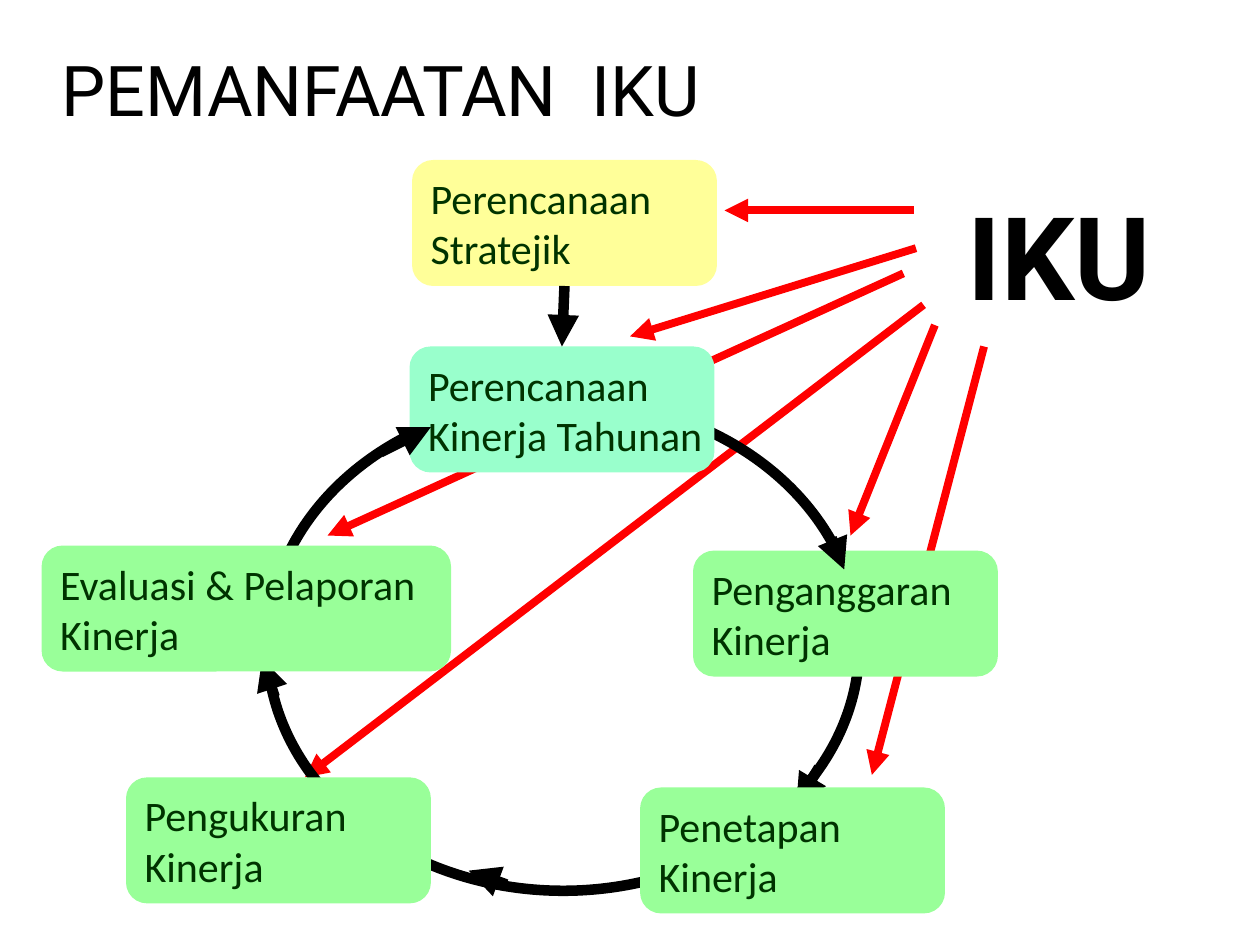
"""Build the slide on how IKU feeds each stage of the performance cycle."""
from lxml.etree import SubElement
from pptx import Presentation
from pptx.dml.color import RGBColor
from pptx.enum.shapes import MSO_CONNECTOR, MSO_SHAPE
from pptx.enum.text import MSO_ANCHOR, PP_ALIGN
from pptx.oxml.ns import qn
from pptx.util import Inches, Pt

COLORS = {
    "red": "FF0000", "black": "000000", "text": "003300",
    "yellow": "FFFF99", "mint": "99FFCC", "green": "99FF99",
}


def add_arrow(start, end, color, width):
    points = [Inches(value) for value in (*start, *end)]
    arrow = slide.shapes.add_connector(MSO_CONNECTOR.STRAIGHT, *points)
    arrow.line.color.rgb = RGBColor.from_string(COLORS[color])
    arrow.line.width = Pt(width)
    SubElement(arrow.line._get_or_add_ln(), qn("a:tailEnd"), type="triangle")
    SubElement(arrow._element.spPr, qn("a:effectLst"))
    return arrow


def add_stage(left, top, width, color, lines):
    stage = slide.shapes.add_shape(
        MSO_SHAPE.ROUNDED_RECTANGLE, Inches(left), Inches(top), Inches(width), Inches(1))
    stage.shadow.inherit = False
    stage.fill.solid()
    stage.fill.fore_color.rgb = RGBColor.from_string(COLORS[color])
    stage.line.fill.background()
    frame = stage.text_frame
    frame.word_wrap = False
    frame.vertical_anchor = MSO_ANCHOR.MIDDLE
    for index, line in enumerate(lines):
        paragraph = frame.add_paragraph() if index else frame.paragraphs[0]
        paragraph.text = line
        paragraph.alignment = PP_ALIGN.LEFT
        paragraph.font.name = "Calibri"
        paragraph.font.size = Pt(24)
        paragraph.font.color.rgb = RGBColor.from_string(COLORS["text"])
    return stage


presentation = Presentation()
presentation.slide_width = Inches(10)
presentation.slide_height = Inches(7.5)
slide = presentation.slides.add_slide(presentation.slide_layouts[6])

for start, end in [
    ((7.33, 2.42), (2.42, 6.17)),
    ((7.17, 2.17), (2.6, 4.25)),
    ((7.81, 2.75), (6.92, 6.15)),
    ((7.25, 1.67), (5.75, 1.67)),
]:
    add_arrow(start, end, "red", 4.5)

cycle = slide.shapes.add_shape(
    MSO_SHAPE.OVAL, Inches(2.12), Inches(3.17), Inches(4.7), Inches(3.9))
cycle.shadow.inherit = False
cycle.fill.background()
cycle.line.color.rgb = RGBColor.from_string(COLORS["black"])
cycle.line.width = Pt(6)

strategic_plan = add_stage(3.27, 1.27, 2.42, "yellow", ["Perencanaan", "Stratejik"])
annual_plan = add_stage(3.25, 2.75, 2.42, "mint", ["Perencanaan", "Kinerja Tahunan"])
add_stage(5.5, 4.37, 2.42, "green", ["Penganggaran", "Kinerja"])

plan_link = add_arrow((4.47, 2.27), (4.47, 2.77), "black", 6)
plan_link.begin_connect(strategic_plan, 2)
plan_link.end_connect(annual_plan, 0)

for start, end in [
    ((6.6, 4.27), (6.7, 4.52)),
    ((6.5, 6.09), (6.32, 6.39)),
    ((4.02, 7.02), (3.72, 6.91)),
    ((2.18, 5.53), (2.08, 5.23)),
    ((3.02, 3.59), (3.42, 3.39)),
]:
    add_arrow(start, end, "black", 6)

for words, box, size, bold, anchor, wrap in [
    ("PEMANFAATAN  IKU", (0.39, 0.24, 8.58, 0.92), 40, False, MSO_ANCHOR.MIDDLE, False),
    ("IKU", (7.58, 1.42, 2.22, 1.21), 66, True, MSO_ANCHOR.TOP, True),
]:
    frame = slide.shapes.add_textbox(*[Inches(value) for value in box]).text_frame
    frame.word_wrap = wrap
    frame.vertical_anchor = anchor
    heading = frame.paragraphs[0]
    heading.text = words
    heading.alignment = PP_ALIGN.LEFT
    heading.font.name = "Roboto"
    heading.font.size = Pt(size)
    heading.font.bold = bold
    heading.font.color.rgb = RGBColor.from_string(COLORS["black"])

for start, end in [((7.27, 1.97), (5, 2.67)), ((7.42, 2.58), (6.75, 4.25))]:
    add_arrow(start, end, "red", 4.5)

for left, top, width, subject in [
    (5.08, 6.25, 2.42, "Penetapan"),
    (1, 6.17, 2.42, "Pengukuran"),
    (0.33, 4.33, 3.25, "Evaluasi & Pelaporan"),
]:
    add_stage(left, top, width, "green", [subject, "Kinerja"])

presentation.save("out.pptx")
